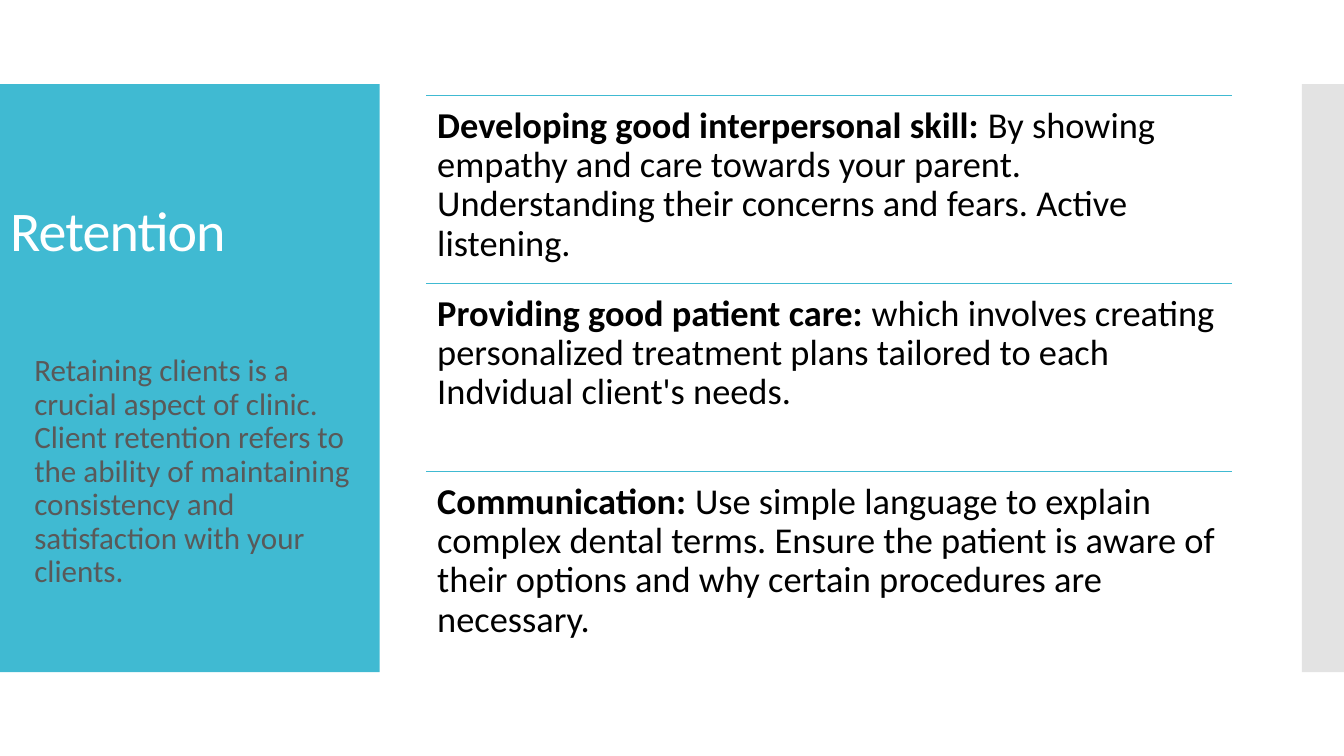
import pptx
import pptx.dml.color
import pptx.enum.shapes
import pptx.enum.text
import pptx.oxml.ns
import pptx.util
from lxml import etree

Cm = pptx.util.Cm
Pt = pptx.util.Pt
COLORS = {"teal": "40BAD2", "grey": "C8C8C8", "white": "FFFFFF", "black": "000000", "text": "595959"}
ADVICE = [
    ("Developing good interpersonal skill:",
     " By showing empathy and care towards your parent. Understanding their concerns and fears. Active listening."),
    ("Providing good patient care:",
     " which involves creating personalized treatment plans tailored to each Indvidual client's needs."),
    ("Communication: ",
     "Use simple language to explain complex dental terms. Ensure the patient is aware of their options "
     "and why certain procedures are necessary."),
]
RETENTION = ("Retaining clients is a crucial aspect of clinic. Client retention refers to the ability of "
             "maintaining consistency and satisfaction with your clients.")
LIST_LEFT, LIST_TOP, LIST_WIDTH, ROW_HEIGHT = 10.74, 2.41, 20.32, 4.74


def rgb(name):
    return pptx.dml.color.RGBColor.from_string(COLORS[name])


def add_child(parent, tag, **attributes):
    return etree.SubElement(parent, pptx.oxml.ns.qn(tag), attributes)


def format_run(run, size, color, bold=False):
    run.font.name = "Calibri"
    run.font.size = Pt(size)
    run.font.bold = bold
    run.font.color.rgb = rgb(color)


def add_band(slide, left, width, color, opacity=100):
    shape = slide.shapes.add_shape(pptx.enum.shapes.MSO_SHAPE.RECTANGLE,
                                   Cm(left), Cm(2.12), Cm(width), Cm(14.82))
    shape.shadow.inherit = False
    shape.fill.solid()
    shape.fill.fore_color.rgb = rgb(color)
    shape.line.fill.background()
    if opacity < 100:
        fill_color = shape.element.spPr.find(".//" + pptx.oxml.ns.qn("a:srgbClr"))
        add_child(fill_color, "a:alpha", val=str(opacity * 1000))
    slide.shapes.title.element.addprevious(shape.element)


def fill_placeholder(placeholder, box, text, size, color, anchor):
    placeholder.left, placeholder.top, placeholder.width, placeholder.height = map(Cm, box)
    frame = placeholder.text_frame
    frame.text = text
    frame.word_wrap = True
    frame.auto_size = pptx.enum.text.MSO_AUTO_SIZE.NONE
    frame.vertical_anchor = anchor
    paragraph = frame.paragraphs[0]
    properties = paragraph._p.get_or_add_pPr()
    properties.set("marL", "0")
    properties.set("indent", "0")
    add_child(properties, "a:buNone")
    paragraph.alignment = pptx.enum.text.PP_ALIGN.LEFT
    paragraph.line_spacing = 0.9
    paragraph.space_before = Pt(0)
    format_run(paragraph.runs[0], size, color)
    return paragraph.runs[0]


def add_rule(slide, top):
    connector = slide.shapes.add_connector(pptx.enum.shapes.MSO_CONNECTOR.STRAIGHT, Cm(LIST_LEFT), Cm(top),
                                           Cm(LIST_LEFT + LIST_WIDTH), Cm(top))
    connector.line.color.rgb = rgb("teal")
    connector.line.width = Pt(0.85)
    add_child(connector.element.spPr, "a:effectLst")


def add_advice(slide, top, heading, detail):
    box = slide.shapes.add_textbox(Cm(LIST_LEFT), Cm(top), Cm(LIST_WIDTH), Cm(ROW_HEIGHT))
    frame = box.text_frame
    frame.word_wrap = True
    frame.margin_left = frame.margin_right = frame.margin_top = frame.margin_bottom = Cm(0.28)
    paragraph = frame.paragraphs[0]
    paragraph.line_spacing = 0.9
    for text, bold in ((heading, True), (detail, False)):
        run = paragraph.add_run()
        run.text = text
        format_run(run, 26, "black", bold)


def main():
    """Build the slide on client retention."""
    presentation = pptx.Presentation()
    presentation.slide_width, presentation.slide_height = Cm(33.87), Cm(19.05)
    slide = presentation.slides.add_slide(presentation.slide_layouts[1])
    add_band(slide, 0, 9.57, "teal")
    add_band(slide, 32.81, 1.06, "grey", 50)
    anchors = pptx.enum.text.MSO_ANCHOR
    title_run = fill_placeholder(slide.shapes.title, (0, 2.74, 10.11, 4.04), "Retention", 40, "white", anchors.BOTTOM)
    title_run.font._element.set("spc", "-60")
    fill_placeholder(slide.placeholders[1], (0.61, 8.81, 8.51, 6.45), RETENTION, 22.2, "text", anchors.TOP)
    for row, (heading, detail) in enumerate(ADVICE):
        top = LIST_TOP + row * ROW_HEIGHT
        add_rule(slide, top)
        add_advice(slide, top, heading, detail)
    presentation.save("out.pptx")


if __name__ == "__main__":
    main()
